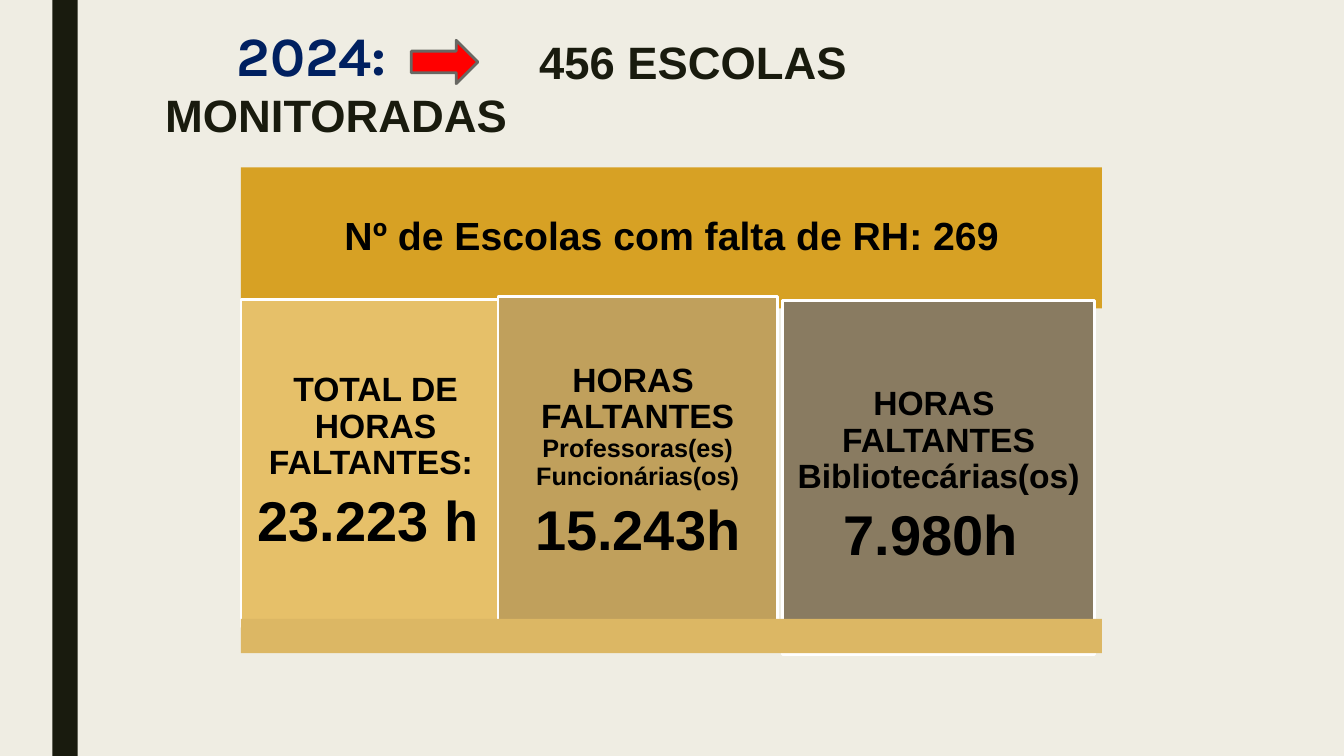
from pptx import Presentation
from pptx.dml.color import RGBColor
from pptx.enum.shapes import MSO_SHAPE as Shape
from pptx.enum.text import MSO_ANCHOR as Anchor, PP_ALIGN as Align
from pptx.util import Inches, Pt


def color(value):
    return RGBColor.from_string(value)


class SlideBuilder:
    FONT = "Arial"
    INK = "191B0E"

    def __init__(self, presentation, background):
        self.slide = presentation.slides.add_slide(presentation.slide_layouts[6])
        self.slide.background.fill.solid()
        self.slide.background.fill.fore_color.rgb = color(background)

    def box(self, left, top, width, height, fill, line=None, kind=Shape.RECTANGLE):
        shape = self.slide.shapes.add_shape(
            kind, Inches(left), Inches(top), Inches(width), Inches(height))
        shape.shadow.inherit = False
        shape.fill.solid()
        shape.fill.fore_color.rgb = color(fill)
        if line:
            shape.line.color.rgb = color(line)
            shape.line.width = Pt(2)
        else:
            shape.line.fill.background()
        return shape

    def style(self, font, size, ink, name=FONT):
        font.name, font.size, font.bold = name, Pt(size), True
        font.color.rgb = color(ink)

    def add_lines(self, paragraph, text, size, ink, name=FONT):
        for number, line in enumerate(text.split("\n")):
            if number:
                paragraph.add_line_break()
            if line:
                run = paragraph.add_run()
                run.text = line
                self.style(run.font, size, ink, name)

    def centered_text(self, shape, paragraphs, inset=0.1):
        """Each paragraph is a list of (text, size) runs."""
        frame = shape.text_frame
        frame.word_wrap = True
        frame.vertical_anchor = Anchor.MIDDLE
        frame.margin_left = frame.margin_right = Inches(inset)
        frame.margin_top = frame.margin_bottom = Inches(inset)
        for index, runs in enumerate(paragraphs):
            paragraph = frame.paragraphs[0] if index == 0 else frame.add_paragraph()
            paragraph.alignment = Align.CENTER
            paragraph.line_spacing = 0.9
            paragraph.space_after = Pt(8.4)
            self.style(paragraph.font, runs[0][1], "000000")
            for text, size in runs:
                self.add_lines(paragraph, text, size, "000000")

    def heading(self, place, text, size, ink, name=FONT, spacing=0.89, indent=0):
        box = self.slide.shapes.add_textbox(*map(Inches, place))
        box.text_frame.word_wrap = True
        paragraph = box.text_frame.paragraphs[0]
        paragraph.line_spacing = spacing
        # The first-line indent leaves room for the year and the arrow
        properties = paragraph._p.get_or_add_pPr()
        properties.set("marL", "0")
        properties.set("indent", str(Inches(indent)))
        self.style(paragraph.font, size, ink, name)
        self.add_lines(paragraph, text, size, ink, name)


def main():
    presentation = Presentation()
    presentation.slide_width = Inches(13.33)
    presentation.slide_height = Inches(7.5)
    builder = SlideBuilder(presentation, "EFEDE3")

    # Side bar, title and arrow
    builder.box(0.52, 0, 0.25, 7.5, builder.INK)
    builder.heading((2.25, 0.24, 1.8, 0.7), "2024:", 39.6, "002060", "Karla")
    builder.heading((1.54, 0.32, 10.5, 1), "456 ESCOLAS\nMONITORADAS", 32.4,
                    builder.INK, spacing=0.97, indent=3.71)
    builder.box(4.08, 0.4, 0.66, 0.43, "FF0000", "686863", Shape.RIGHT_ARROW)

    # Header band
    header = builder.box(2.39, 1.66, 8.54, 1.4, "D7A124")
    builder.centered_text(header, [[("Nº de Escolas com falta de RH: 269", 28)]], 0.12)

    # Cards: position, fill, heading runs, hours
    cards = [
        ((2.39, 2.97, 2.67, 3.25), "E6C069",
         [("TOTAL DE\nHORAS\nFALTANTES: ", 24)], "23.223 h "),
        ((4.94, 2.94, 2.77, 3.31), "C0A05C",
         [("HORAS \nFALTANTES\n", 24), ("Professoras(es)\nFuncionárias(os)", 18)],
         "15.243h"),
        ((7.76, 2.98, 3.1, 3.51), "897B61",
         [("HORAS \nFALTANTES\nBibliotecárias(os)", 24)], "7.980h "),
    ]
    for place, fill, heading, hours in cards:
        card = builder.box(*place, fill, "FFFFFF")
        builder.centered_text(card, [heading, [(hours, 40)]])

    # Footer band
    builder.box(2.39, 6.14, 8.54, 0.34, "DCB764")

    presentation.save("out.pptx")


if __name__ == "__main__":
    main()
